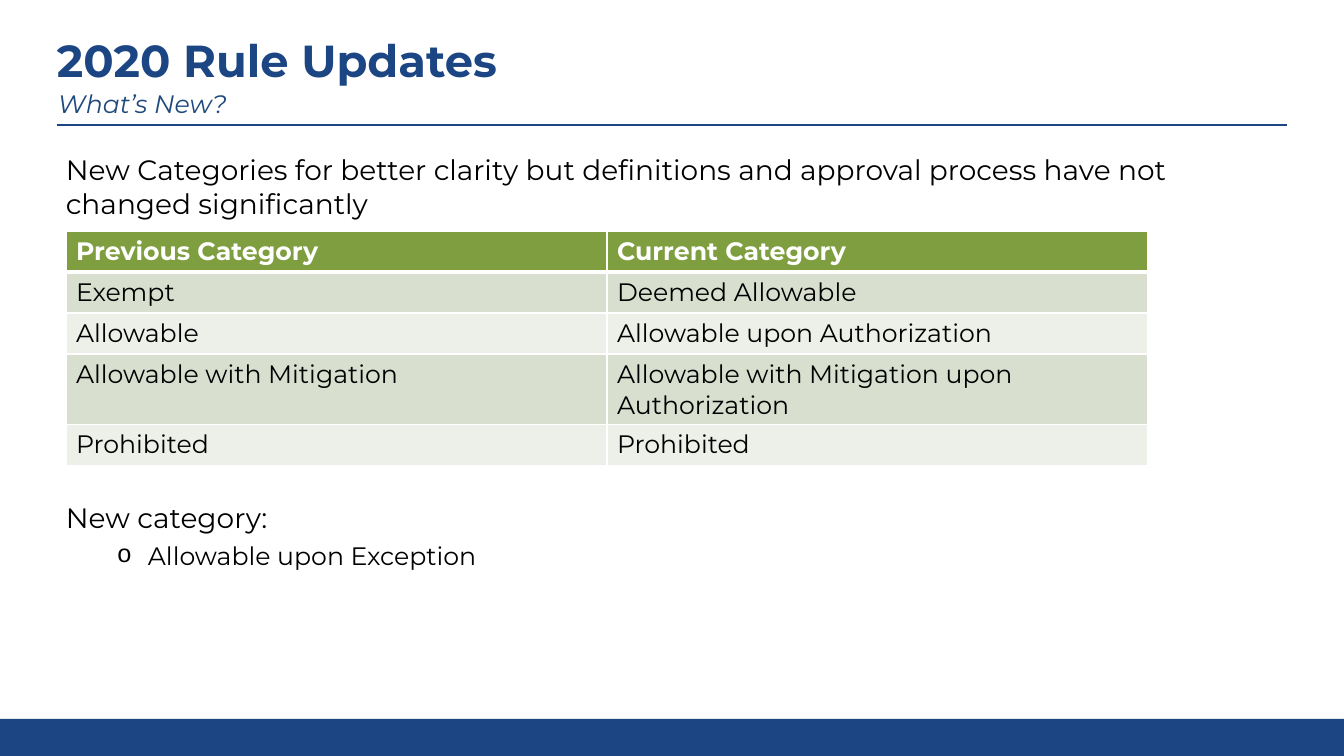
import pptx
import pptx.util
import pptx.dml.color
import pptx.enum.shapes
import pptx.enum.text
import pptx.oxml
import pptx.oxml.ns
import lxml.etree

PX = 914400 / 100.8
COLORS = {
    "navy": "1C4584", "blue": "1F497D", "black": "000000", "white": "FFFFFF",
    "green": "7F9E3F", "sage": "D8DFCF", "mist": "ECF0E8",
}
MID = pptx.enum.text.MSO_ANCHOR.MIDDLE
TOP = pptx.enum.text.MSO_ANCHOR.TOP


def px(*nums):
    return [pptx.util.Emu(round(n * PX)) for n in nums]


def write(par, text, size, color, **form):
    run = par.add_run()
    run.text = text
    look = {"name": "Montserrat", "size": pptx.util.Pt(size), **form}
    for key, val in look.items():
        setattr(run.font, key, val)
    run.font.color.rgb = pptx.dml.color.RGBColor.from_string(COLORS[color])


deck = pptx.Presentation()
deck.slide_width, deck.slide_height = px(1344, 756)
slide = deck.slides.add_slide(deck.slide_layouts[6])
shapes = slide.shapes
navy = pptx.dml.color.RGBColor.from_string(COLORS["navy"])

band = shapes.add_shape(pptx.enum.shapes.MSO_SHAPE.RECTANGLE, *px(0, 719, 1344, 37))
band.shadow.inherit = False
band.fill.solid()
band.fill.fore_color.rgb = navy
band.line.fill.background()

rule = shapes.add_connector(pptx.enum.shapes.MSO_CONNECTOR.STRAIGHT, *px(57, 125, 1287, 125))
rule.line.color.rgb = navy
rule.line.width = pptx.util.Pt(1.5)
lxml.etree.SubElement(rule._element.spPr, pptx.oxml.ns.qn("a:effectLst"))

frames = []
for spot, anchor in [
    ((47, 32, 896, 61), MID),
    ((48, 74, 711, 62), MID),
    ((56, 148, 1184, 524), TOP),
]:
    frame = shapes.add_textbox(*px(*spot)).text_frame
    form = {"word_wrap": True, "vertical_anchor": anchor}
    for key, val in form.items():
        setattr(frame, key, val)
    frames.append(frame)
title, sub, body = frames

title.paragraphs[0].line_spacing = 0.9
write(title.paragraphs[0], "2020 Rule Updates", 32, "navy", bold=True)
sub.paragraphs[0].line_spacing = 0.9
write(sub.paragraphs[0], "What’s New?", 18, "blue", italic=True)

write(
    body.paragraphs[0],
    "New Categories for better clarity but definitions and approval process "
    "have not changed significantly",
    20, "black",
)
label = body.add_paragraph()
label.space_before = pptx.util.Pt(200)
write(label, "New category:", 20, "black")

item = body.add_paragraph()
item.level = 1
item.space_before = pptx.util.Pt(5)
write(item, "Allowable upon Exception", 18, "black")
props = item._p.get_or_add_pPr()
inset, hang = px(82, 31)
props.set("marL", str(inset))
props.set("indent", str(-hang))
for tag, key, val in [("a:buFont", "typeface", "Courier New"), ("a:buChar", "char", "o")]:
    lxml.etree.SubElement(props, pptx.oxml.ns.qn(tag)).set(key, val)

rows = [
    ("Previous Category", "Current Category"),
    ("Exempt", "Deemed Allowable"),
    ("Allowable", "Allowable upon Authorization"),
    ("Allowable with Mitigation", "Allowable with Mitigation upon Authorization"),
    ("Prohibited", "Prohibited"),
]
table = shapes.add_table(len(rows), 2, *px(66, 231, 1082, 41 * len(rows))).table
for key, val in {"first_row": False, "horz_banding": False}.items():
    setattr(table, key, val)

for r, texts in enumerate(rows):
    head = r == 0
    fill = "green" if head else ("mist", "sage")[r % 2]
    for c, text in enumerate(texts):
        cell = table.cell(r, c)
        write(cell.text_frame.paragraphs[0], text, 18, "white" if head else "black", bold=head)
        props = cell._tc.get_or_add_tcPr()
        for side in "LRTB":
            thick = 3 if (head and side == "B") or (r == 1 and side == "T") else 1
            props.append(pptx.oxml.parse_xml(
                f'<a:ln{side} {pptx.oxml.ns.nsdecls("a")} w="{pptx.util.Pt(thick)}">'
                f'<a:solidFill><a:srgbClr val="{COLORS["white"]}"/></a:solidFill></a:ln{side}>'
            ))
        cell.fill.solid()
        cell.fill.fore_color.rgb = pptx.dml.color.RGBColor.from_string(COLORS[fill])

deck.save("out.pptx")
